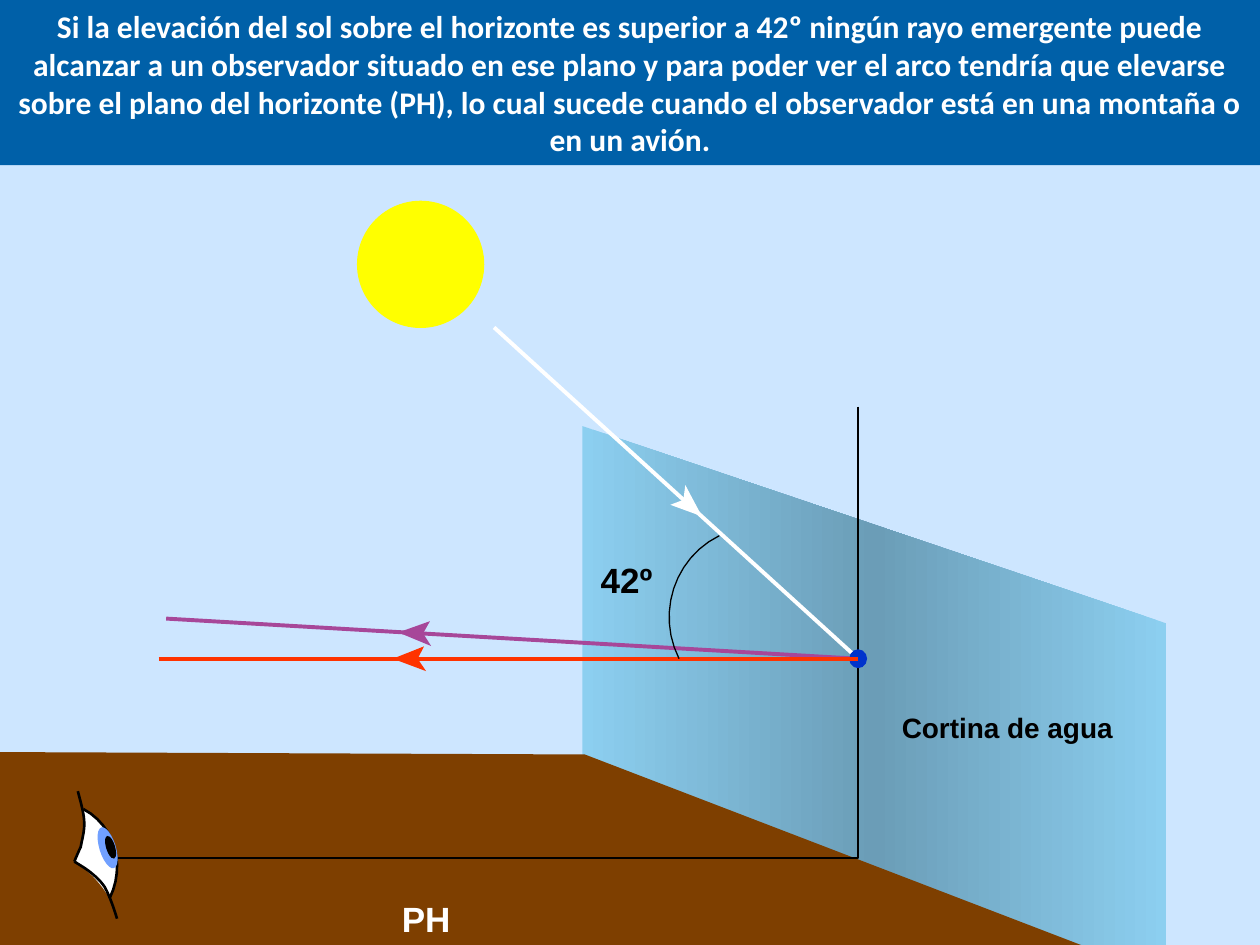
import copy
import math

import pptx
import pptx.dml.color
import pptx.enum.shapes
import pptx.enum.text
import pptx.oxml
import pptx.util
from pptx.util import Cm

WHITE, BLACK = "FFFFFF", "000000"
RED, VIOLET = "FF3300", "A74799"
WATER_EDGE, WATER_MIDDLE = "8CCFF0", "6B9DB7"
DROP = (17.3, 13.28)
EYE_CORNER = (1.5, 17.37)


def rgb(color):
    return pptx.dml.color.RGBColor.from_string(color)


def paint(shape, fill=None, line=None, width=0.75):
    shape.shadow.inherit = False
    if fill:
        shape.fill.solid()
        shape.fill.fore_color.rgb = rgb(fill)
    else:
        shape.fill.background()
    if line:
        shape.line.color.rgb = rgb(line)
        shape.line.width = pptx.util.Pt(width)
    else:
        shape.line.fill.background()


def curve(start, *segments, steps=12):
    """Points along joined cubic Béziers; each segment is two controls and an end."""
    points = [start]
    for first, second, end in segments:
        origin = points[-1]
        for step in range(1, steps + 1):
            t = step / steps
            weights = ((1 - t) ** 3, 3 * t * (1 - t) ** 2, 3 * t * t * (1 - t), t ** 3)
            corners = (origin, first, second, end)
            points.append(tuple(sum(w * c[axis] for w, c in zip(weights, corners))
                                for axis in (0, 1)))
    return points


def add_outline(slide, points, closed=False, **look):
    """Freeform through points given in centimetres."""
    vertices = [(Cm(x), Cm(y)) for x, y in points]
    builder = slide.shapes.build_freeform(*vertices[0])
    builder.add_line_segments(vertices[1:], close=closed)
    outline = builder.convert_to_shape()
    paint(outline, **look)
    return outline


def add_ellipse(slide, center, width, height, rotation=0, **look):
    ellipse = slide.shapes.add_shape(
        pptx.enum.shapes.MSO_SHAPE.OVAL,
        Cm(center[0] - width / 2), Cm(center[1] - height / 2), Cm(width), Cm(height))
    ellipse.rotation = rotation
    paint(ellipse, **look)


def add_ray(slide, start, end, color):
    ray = slide.shapes.add_connector(
        pptx.enum.shapes.MSO_CONNECTOR.STRAIGHT,
        *(Cm(value) for value in (*start, *end)))
    ray.line.color.rgb = rgb(color)
    ray.line.width = pptx.util.Pt(2.25)
    ray._element.spPr.append(pptx.oxml.parse_xml(
        '<a:effectLst xmlns:a="http://schemas.openxmlformats.org/drawingml/2006/main"/>'))


def add_ray_mark(slide, tip, angle, color):
    """Barbed mark that points left at angle 0 and turns clockwise."""
    cos, sin = math.cos(math.radians(angle)), math.sin(math.radians(angle))
    barb = [(0, 0), (0.67, 0.25), (0.5, 0), (0.63, -0.25)]
    points = [(tip[0] + x * cos - y * sin, tip[1] + x * sin + y * cos) for x, y in barb]
    add_outline(slide, points, closed=True, fill=color)


def write(frame, text, size, color, font="Arial", align=pptx.enum.text.PP_ALIGN.LEFT):
    frame.text = text
    paragraph = frame.paragraphs[0]
    paragraph.alignment = align
    style = paragraph.runs[0].font
    style.name, style.size, style.bold = font, pptx.util.Pt(size), True
    style.color.rgb = rgb(color)


def add_label(slide, text, left, top, width, height, size, color):
    label = slide.shapes.add_textbox(Cm(left), Cm(top), Cm(width), Cm(height))
    label.text_frame.word_wrap = False
    write(label.text_frame, text, size, color)


def set_title(slide, text):
    title = slide.shapes.title
    title.left, title.top, title.width, title.height = Cm(0), Cm(0), Cm(25.4), Cm(3.33)
    title.fill.solid()
    title.fill.fore_color.rgb = rgb("0060A8")
    title.text_frame.auto_size = pptx.enum.text.MSO_AUTO_SIZE.NONE
    title.text_frame.word_wrap = True
    title.text_frame.vertical_anchor = pptx.enum.text.MSO_ANCHOR.MIDDLE
    write(title.text_frame, text, 18, WHITE, "Calibri", pptx.enum.text.PP_ALIGN.CENTER)


def add_water_curtain(slide):
    curtain = add_outline(
        slide, [(11.74, 15.21), (11.74, 8.59), (23.52, 12.57), (23.52, 19.71)], closed=True)
    curtain.fill.gradient()
    curtain.fill.gradient_angle = 0
    stop_list = curtain._element.spPr.xpath(".//a:gsLst")[0]
    stop_list.append(copy.deepcopy(stop_list[-1]))
    looks = zip(curtain.fill.gradient_stops, (0, 0.5, 1), (WATER_EDGE, WATER_MIDDLE, WATER_EDGE))
    for stop, position, color in looks:
        stop.position = position
        stop.color.rgb = rgb(color)


def add_eye(slide):
    cornea = curve((1.68, 16.31), ((2.31, 16.64), (2.54, 17.45), (2.21, 18.11)))
    lower_rim = curve(cornea[-1], ((2.05, 17.82), (1.72, 17.48), EYE_CORNER))
    upper_rim = curve(EYE_CORNER, ((1.68, 16.95), (1.77, 16.75), cornea[0]))
    upper_lid = curve((1.57, 15.95),
                      ((1.63, 16.18), (1.7, 16.41), (1.7, 16.61)),
                      ((1.7, 16.79), (1.65, 16.94), (1.63, 17.07)),
                      ((1.57, 17.2), (1.52, 17.32), EYE_CORNER))
    lower_lid = curve((2.36, 18.52),
                      ((2.29, 18.29), (2.21, 18.06), (2.11, 17.88)),
                      ((2.01, 17.73), (1.88, 17.63), (1.78, 17.55)),
                      ((1.68, 17.48), (1.55, 17.4), EYE_CORNER))
    add_outline(slide, cornea + lower_rim[1:] + upper_rim[1:-1], closed=True, fill=WHITE)
    for lid in (upper_lid, cornea):
        add_outline(slide, lid, line=BLACK, width=1.5)
    add_ellipse(slide, (2.17, 17.09), 0.33, 0.86, rotation=342.9, fill="71A0FF")
    add_ellipse(slide, (2.23, 17.08), 0.18, 0.48, rotation=342.9, fill=BLACK)
    add_outline(slide, lower_lid, line=BLACK, width=1.5)


def main():
    deck = pptx.Presentation()
    deck.slide_width, deck.slide_height = Cm(25.4), Cm(19.05)
    slide = deck.slides.add_slide(deck.slide_layouts[5])
    slide.background.fill.solid()
    slide.background.fill.fore_color.rgb = rgb("CDE6FF")
    set_title(slide, "Si la elevación del sol sobre el horizonte es superior a 42º ningún rayo "
                     "emergente puede alcanzar a un observador situado en ese plano y para poder "
                     "ver el arco tendría que elevarse sobre el plano del horizonte (PH), lo cual "
                     "sucede cuando el observador está en una montaña o en un avión.")

    add_water_curtain(slide)
    add_outline(slide, [(11.79, 15.21), (-0.41, 15.16), (-0.25, 20.17), (23.77, 19.81)],
                closed=True, fill="7E3F00")
    add_ray(slide, (9.96, 6.6), DROP, WHITE)
    add_ray(slide, (3.35, 12.47), DROP, VIOLET)
    add_outline(slide, [(17.3, 8.2), (17.3, 17.3), (1.73, 17.3)], line=BLACK)
    add_ellipse(slide, DROP, 0.36, 0.38, fill="0033CC")
    add_ray_mark(slide, (14.15, 10.41), 221.7, WHITE)
    add_ray_mark(slide, (8.03, 12.75), 2, VIOLET)
    add_ray_mark(slide, (7.92, 13.28), 0, RED)
    add_ellipse(slide, (8.48, 5.33), 2.54, 2.54, fill="FFFF00", line="FFFF00")
    add_ray(slide, (3.2, 13.28), DROP, RED)
    add_outline(slide, curve((14.5, 10.8), ((13.59, 11.25), (13.23, 12.37), (13.69, 13.28))),
                line=BLACK)
    add_label(slide, "42º", 11.86, 11.13, 1.7, 1.09, 20, BLACK)
    add_eye(slide)
    add_label(slide, "PH", 7.85, 17.96, 1.57, 1.09, 20, WHITE)
    add_label(slide, "Cortina de agua", 17.93, 14.2, 5.18, 0.94, 16, BLACK)
    deck.save("out.pptx")


if __name__ == "__main__":
    main()
